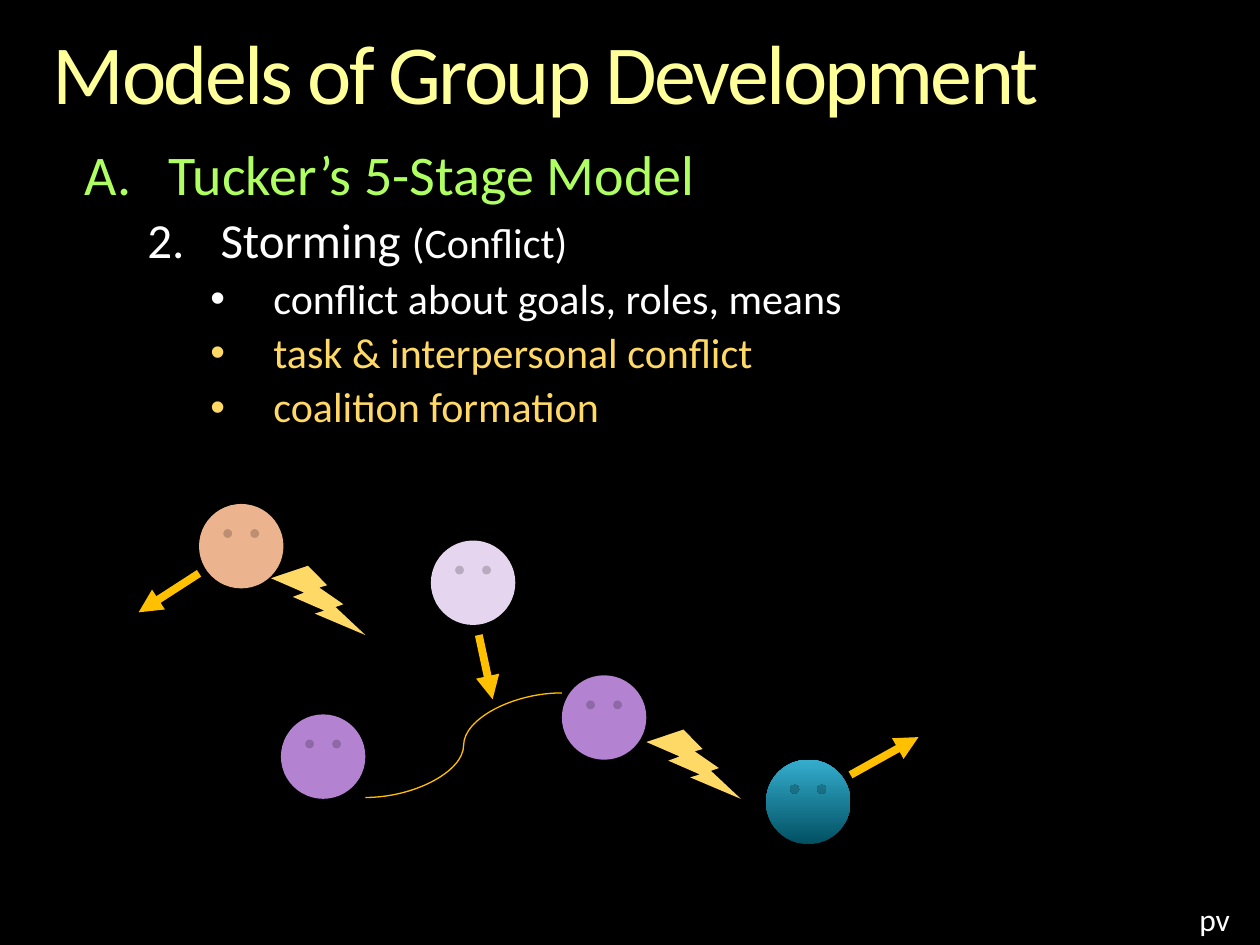
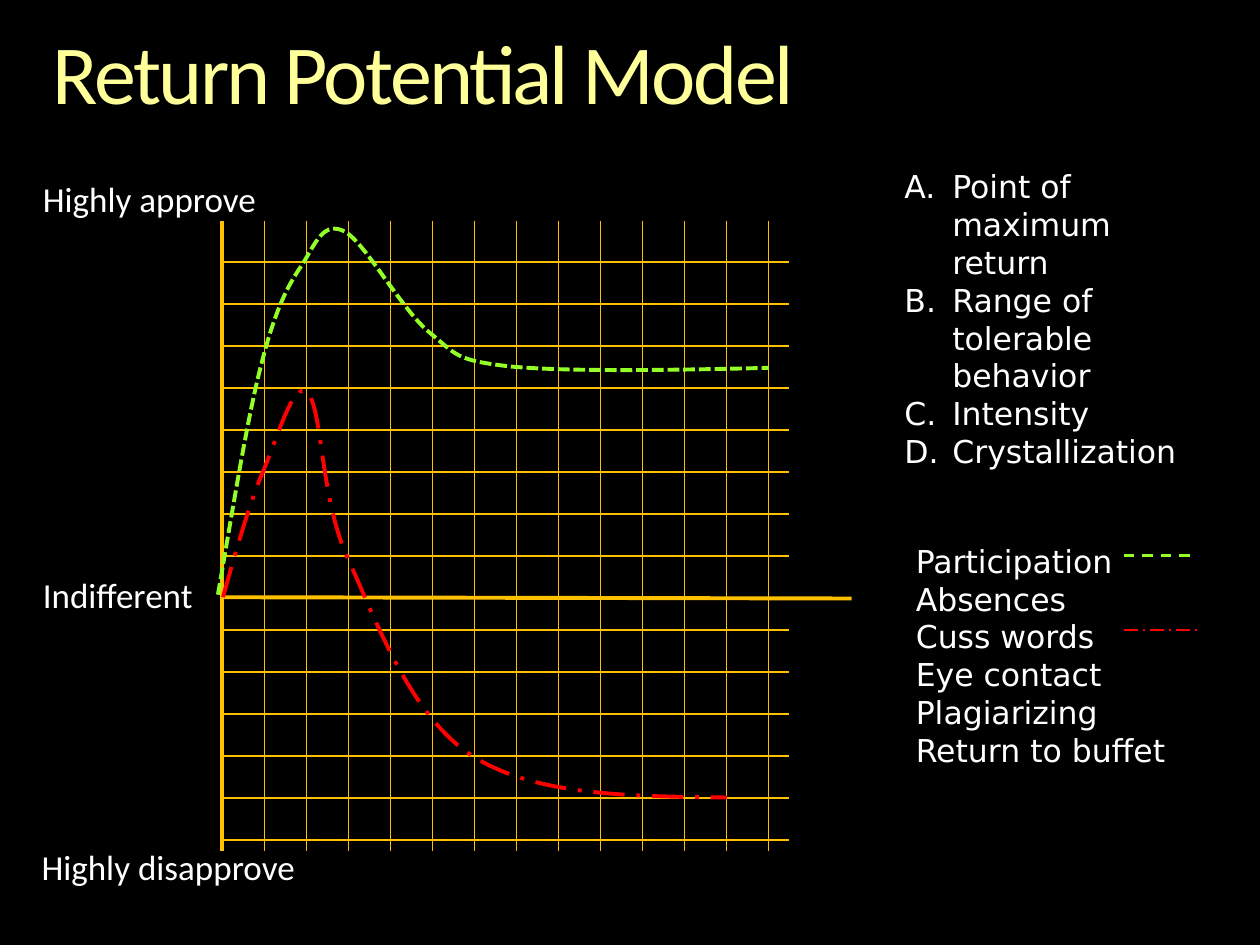
from collections import namedtuple

from lxml.etree import SubElement
from pptx import Presentation
from pptx.dml.color import RGBColor
from pptx.enum.dml import MSO_LINE as Dash
from pptx.enum.shapes import MSO_CONNECTOR as Connector, MSO_SHAPE as Preset
from pptx.enum.text import MSO_ANCHOR, MSO_AUTO_SIZE, PP_ALIGN
from pptx.oxml.ns import qn
from pptx.util import Inches, Pt

Box = namedtuple("Box", "left top width height")
Item = namedtuple("Item", "text size color bullet margin hanging", defaults=(None, 0, 0))

BODY_FONT, LIST_FONT = "Calibri", "DejaVu Sans"
BLACK, WHITE, PALE_YELLOW = "000000", "FFFFFF", "FFFF99"
GOLD, SAND, LIME, GREEN, RED = "FFC000", "FFD966", "B0FF62", "93FF27", "FF0000"
PEACH, LILAC, PURPLE = "ECB38F", "E6D5EF", "B382D0"
DEEP_TEAL, LIGHT_TEAL = "015062", "35ADCE"
CELL = 1 / 3


def rgb(color):
    """Turn a hex string into a colour."""
    return RGBColor.from_string(color)


def inches(box):
    """Convert every length of a box or point."""
    return [Inches(value) for value in box]


def add_bullet(paragraph, item):
    """Give a paragraph a hanging bullet, either a character or a numbering scheme."""
    properties = paragraph._p.get_or_add_pPr()
    properties.set("marL", str(Inches(item.margin)))
    properties.set("indent", str(-Inches(item.hanging)))
    color = SubElement(properties, qn("a:buClr"))
    SubElement(color, qn("a:srgbClr"), val=item.color)
    if item.bullet == "•":
        SubElement(properties, qn("a:buFont"), typeface="Arial")
        SubElement(properties, qn("a:buChar"), char=item.bullet)
    else:
        scheme, start = item.bullet
        SubElement(properties, qn("a:buAutoNum"), type=scheme, startAt=str(start))


def format_font(paragraph, size, color, font=BODY_FONT):
    """Set the font of a whole paragraph."""
    paragraph.font.size = Pt(size)
    paragraph.font.name = font
    paragraph.font.color.rgb = rgb(color)


def clear_insets(frame):
    """Remove the margins of a text frame."""
    frame.margin_left = frame.margin_right = frame.margin_top = frame.margin_bottom = 0


def add_text(slide, box, items, font=BODY_FONT, tight=True):
    """Add a text box; tight ones have no margins and closer lines."""
    frame = slide.shapes.add_textbox(*inches(box)).text_frame
    frame.word_wrap = True
    if tight:
        clear_insets(frame)
    for index, item in enumerate(items):
        paragraph = frame.add_paragraph() if index else frame.paragraphs[0]
        paragraph.text = item.text
        if tight:
            paragraph.line_spacing = 0.9
            if index:
                paragraph.space_before = Pt(5)
        if item.bullet:
            add_bullet(paragraph, item)
        format_font(paragraph, item.size, item.color, font)
    return frame


def add_line(slide, start, end, width, color=GOLD, kind=Connector.STRAIGHT, dash=None, arrow=False):
    """Draw a connector between two points."""
    line = slide.shapes.add_connector(kind, *inches(start + end))
    line.line.width = Pt(width)
    line.line.color.rgb = rgb(color)
    if dash:
        line.line.dash_style = dash
    if arrow:
        SubElement(line.line._get_or_add_ln(), qn("a:tailEnd"), type="triangle")
    SubElement(line._element.spPr, qn("a:effectLst"))


def add_preset(slide, preset, box, *colors):
    """Add an unlined shape with a plain fill or a rising two-colour gradient."""
    shape = slide.shapes.add_shape(preset, *inches(box))
    shape.shadow.inherit = False
    shape.line.fill.background()
    if len(colors) == 1:
        shape.fill.solid()
        shape.fill.fore_color.rgb = rgb(colors[0])
    else:
        shape.fill.gradient()
        shape.fill.gradient_angle = 90
        for stop, color in zip(shape.fill.gradient_stops, colors):
            stop.color.rgb = rgb(color)


def round_segments(shape):
    """Turn each three straight segments of an outline into one cubic curve."""
    outline = next(shape._element.iter(qn("a:path")))
    segments = outline.findall(qn("a:lnTo"))
    for first in range(0, len(segments), 3):
        cubic = SubElement(outline, qn("a:cubicBezTo"))
        for segment in segments[first:first + 3]:
            cubic.append(segment[0])
            outline.remove(segment)


def add_curve(slide, box, points, color, dash):
    """Draw a dashed open curve: a start, then three offsets in the box for each cubic."""
    start, *rest = [inches((box.left + x, box.top + y)) for x, y in points]
    builder = slide.shapes.build_freeform(*start)
    builder.add_line_segments(rest, close=False)
    curve = builder.convert_to_shape()
    round_segments(curve)
    curve.shadow.inherit = False
    curve.fill.background()
    curve.line.color.rgb = rgb(color)
    curve.line.width = Pt(2.25)
    curve.line.dash_style = dash


def add_titled_slide(presentation, text):
    """Add a title-only slide with the shared title style."""
    slide = presentation.slides.add_slide(presentation.slide_layouts[5])
    title = slide.shapes.title
    title.left, title.top, title.width, title.height = inches((0.42, 0.25, 9.17, 0.73))
    frame = title.text_frame
    frame.text = text
    frame.auto_size = MSO_AUTO_SIZE.NONE
    frame.vertical_anchor = MSO_ANCHOR.TOP
    clear_insets(frame)
    paragraph = frame.paragraphs[0]
    paragraph.alignment = PP_ALIGN.LEFT
    paragraph.line_spacing = 0.9
    format_font(paragraph, 48, PALE_YELLOW)
    paragraph.runs[0]._r.get_or_add_rPr().set("spc", "-150")
    return slide


def add_stage_outline(slide, box):
    """Write the outline of the storming stage."""
    points = (("conflict about goals, roles, means", WHITE),
              ("task & interpersonal conflict", SAND),
              ("coalition formation", SAND))
    frame = add_text(slide, box, [
        Item("Tucker’s 5-Stage Model", 32, LIME, ("alphaUcPeriod", 1), 0.67, 0.67),
        Item("Storming ", 28, WHITE, ("arabicPeriod", 2), 1.08, 0.58),
        *(Item(text, 24, color, "•", 1.5, 0.5) for text, color in points)])
    remark = frame.paragraphs[1].add_run()
    remark.text = "(Conflict)"
    remark.font.size = Pt(24)


def add_conflict_scene(slide, box):
    """Draw the group members with their clashes, exits and alliance."""
    def at(x, y):
        return box.left + x, box.top + y

    faces = ((0.48, 0, PEACH), (2.32, 0.29, LILAC), (1.13, 1.67, PURPLE),
             (4.98, 2.03, DEEP_TEAL, LIGHT_TEAL), (3.36, 1.36, PURPLE))
    for x, y, *colors in faces:
        add_preset(slide, Preset.SMILEY_FACE, at(x, y) + (0.67, 0.67), *colors)
    for x, y in ((1.05, 0.49), (4.03, 1.79)):
        add_preset(slide, Preset.LIGHTNING_BOLT, at(x, y) + (0.75, 0.55), SAND)
    exits = (((5.65, 2.15), (6.19, 1.85)), ((0.48, 0.55), (0, 0.86)), ((2.7, 1.04), (2.81, 1.55)))
    for start, end in exits:
        add_line(slide, at(*start), at(*end), 4.5, arrow=True)
    add_line(slide, at(1.8, 2.33), at(3.36, 1.5), 0.75, kind=Connector.CURVE)


def add_approval_graph(slide, box):
    """Draw the axes, grid and two return curves."""
    left, top, width, height = box
    right, bottom = left + 4.5, top + height
    add_line(slide, (left, top + 2.99), (left + width, top + 3), 2.25)
    add_line(slide, (left, bottom), (left, top), 2.25)
    for column in range(13):
        x = left + 0.34 + column * CELL
        add_line(slide, (x, top), (x, bottom), 0.75)
    for first, count in ((0.33, 8), (3.25, 6)):
        for row in range(count):
            y = top + first + row * CELL
            add_line(slide, (left, y), (right, y), 0.75)
    cuss_words = [(0.01, 2.99), (0.11, 2.63), (0.21, 2.28), (0.32, 2.01),
                  (0.44, 1.74), (0.57, 1.25), (0.68, 1.37),
                  (0.8, 1.48), (0.78, 2.2), (1, 2.68),
                  (1.22, 3.16), (1.49, 3.93), (1.99, 4.25),
                  (2.49, 4.57), (3.25, 4.57), (4.01, 4.58)]
    participation = [(-0.03, 2.97), (0.09, 2.28), (0.2, 1.59), (0.31, 1.16),
                     (0.42, 0.72), (0.52, 0.52), (0.64, 0.35),
                     (0.75, 0.17), (0.81, 0), (0.98, 0.09),
                     (1.14, 0.18), (1.43, 0.71), (1.65, 0.89),
                     (1.87, 1.07), (1.85, 1.11), (2.3, 1.16),
                     (2.75, 1.2), (3.54, 1.19), (4.34, 1.17)]
    add_curve(slide, box, cuss_words, RED, Dash.LONG_DASH_DOT)
    add_curve(slide, box, participation, GREEN, Dash.SQUARE_DOT)


def add_axis_labels(slide, box):
    """Label the approval axis at its top, middle and bottom."""
    labels = (("Highly approve", 0.01, 0, 2.83), ("Indifferent", 0.01, 3.14, 1.29),
              ("Highly disapprove", 0, 5.3, 2.83))
    for text, x, y, width in labels:
        add_text(slide, Box(box.left + x, box.top + y, width, 0.3), [Item(text, 20, WHITE)])


def add_features(slide, box):
    """List the lettered features of the model."""
    features = ("Point of maximum return", "Range of tolerable behavior",
                "Intensity", "Crystallization")
    add_text(slide, box, [Item(text, 18, WHITE, ("alphaUcPeriod", 1), 0.38, 0.38)
                          for text in features], LIST_FONT, tight=False)


def add_legend(slide, box):
    """List the behaviors, with line keys for the two plotted ones."""
    behaviors = ("Participation", "Absences", "Cuss words",
                 "Eye contact", "Plagiarizing", "Return to buffet")
    add_text(slide, box, [Item(text, 18, WHITE) for text in behaviors], LIST_FONT, tight=False)
    keys = ((0.16, 1.5, GREEN, Dash.DASH), (0.75, 1, RED, Dash.LONG_DASH_DOT))
    for offset, width, color, dash in keys:
        y = box.top + offset
        add_line(slide, (box.left + 1.75, y), (box.left + box.width, y), width, color, dash=dash)


def main():
    """Build and save both slides."""
    presentation = Presentation()
    presentation.slide_width, presentation.slide_height = inches((10, 7.5))
    background = presentation.slide_master.background.fill
    background.solid()
    background.fore_color.rgb = rgb(BLACK)

    storming = add_titled_slide(presentation, "Models of Group Development")
    add_stage_outline(storming, Box(0.67, 1.17, 8.75, 2.34))
    add_text(storming, Box(9.42, 7.09, 0.58, 0.41), [Item("pv", 18, WHITE)], tight=False)
    add_conflict_scene(storming, Box(1.1, 4, 6.19, 2.7))

    returns = add_titled_slide(presentation, "Return Potential Model")
    add_axis_labels(returns, Box(0.33, 1.45, 2.84, 5.6))
    add_features(returns, Box(7.08, 1.28, 2.42, 3.13))
    add_legend(returns, Box(7.17, 4.25, 2.33, 2.22))
    add_approval_graph(returns, Box(1.76, 1.75, 5, 5))

    presentation.save("out.pptx")


if __name__ == "__main__":
    main()
